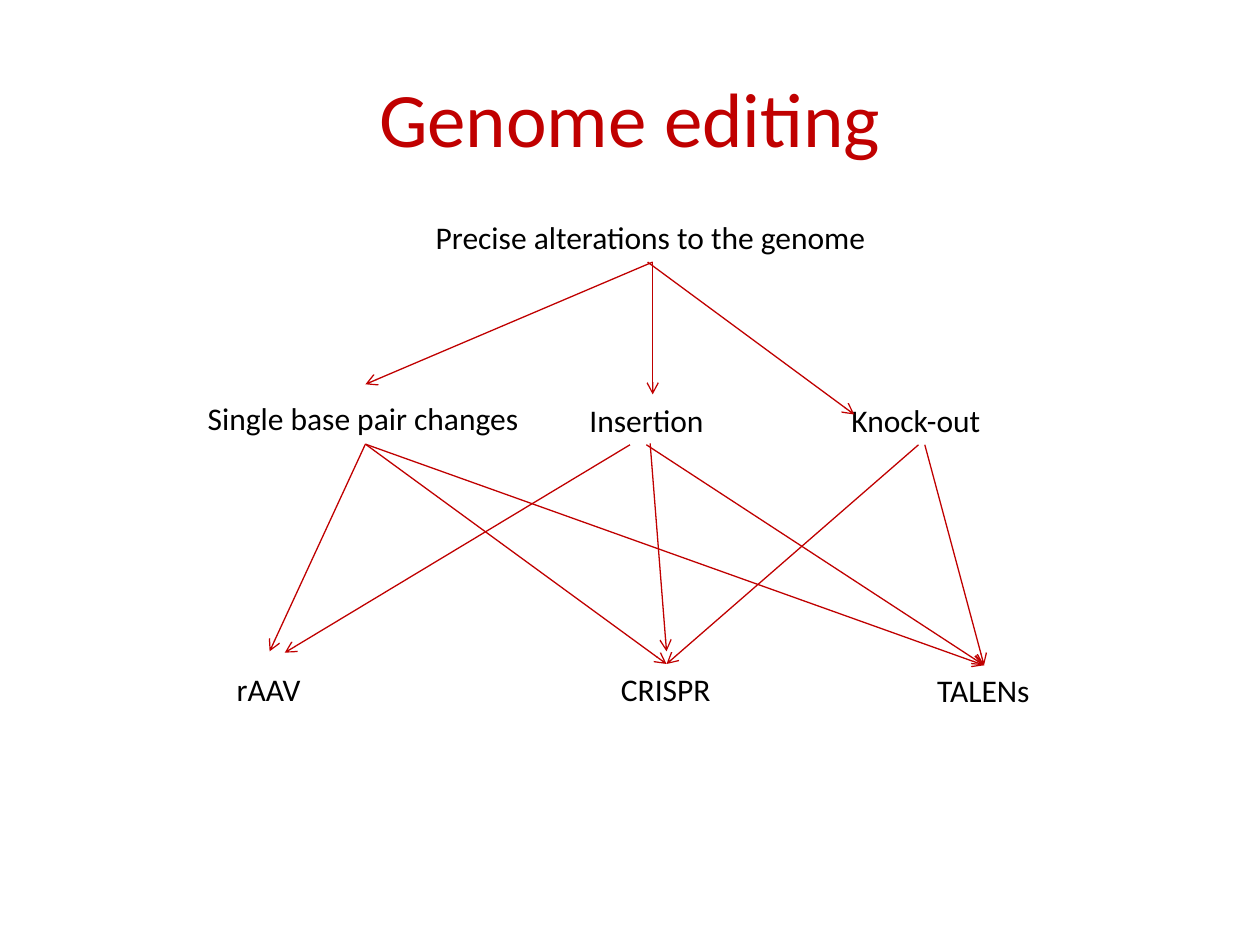
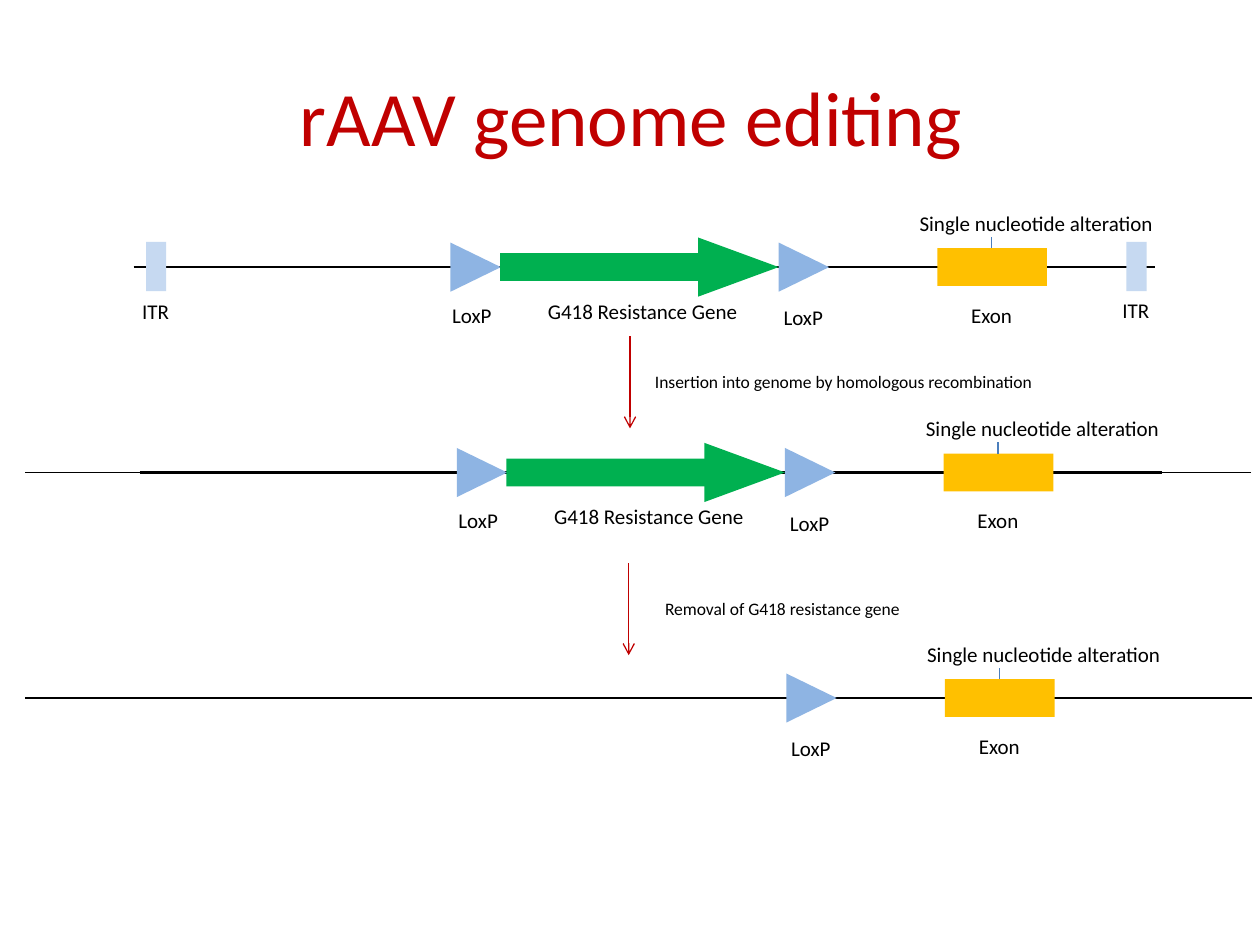
from lxml import etree
from pptx import Presentation, util as u
from pptx.dml.color import RGBColor
from pptx.enum import shapes, text
from pptx.oxml.ns import qn

COLS, ROWS = 100, 75
FONT = "Calibri"
RED, BLACK, BLUE = "C00000", "000000", "4B7EBC"
ITR_BLUE, LOXP_BLUE = "C6D9F1", "8EB4E3"
GREEN, AMBER = "00B050", "FFC000"


def color(hex_code):
    return RGBColor.from_string(hex_code)


class Deck:
    """Style and current slide; lengths are columns and rows of the grid."""

    def __init__(self):
        self.prs = Presentation()
        self.prs.slide_width, self.prs.slide_height = u.Inches(10), u.Inches(7.5)
        self.cell_w = self.prs.slide_width / COLS
        self.cell_h = self.prs.slide_height / ROWS

    def x(self, cols):
        return u.Emu(round(cols * self.cell_w))

    def y(self, rows):
        return u.Emu(round(rows * self.cell_h))

    def box(self, left, top, width, height):
        return self.x(left), self.y(top), self.x(width), self.y(height)

    def set_text(self, tf, words, size, hex_code):
        tf.text = words
        font = tf.paragraphs[0].runs[0].font
        font.name, font.size = FONT, u.Pt(size)
        font.color.rgb = color(hex_code)

    def slide(self, title, left, top):
        self.s = self.prs.slides.add_slide(self.prs.slide_layouts[5])
        self.shapes = self.s.shapes
        sp = self.shapes.title
        sp.left, sp.top, sp.width, sp.height = self.box(left, top, 90, 12.5)
        tf = sp.text_frame
        tf.vertical_anchor = text.MSO_ANCHOR.MIDDLE
        self.set_text(tf, title, 44, RED)
        tf.paragraphs[0].alignment = text.PP_ALIGN.CENTER

    def group(self):
        """Collect the elements that follow in a new group."""
        self.shapes = self.s.shapes.add_group_shape().shapes

    def label(self, words, left, top, width, size=12):
        height = {18: 4, 12: 3, 10: 2.7}[size]
        tf = self.shapes.add_textbox(*self.box(left, top, width, height)).text_frame
        tf.word_wrap = False
        tf.auto_size = text.MSO_AUTO_SIZE.SHAPE_TO_FIT_TEXT
        self.set_text(tf, words, size, BLACK)

    def shape(self, kind, cx, cy, width, height, hex_code):
        """Add a borderless shape around a centre point."""
        sp = self.shapes.add_shape(
            kind, *self.box(cx - width / 2, cy - height / 2, width, height))
        sp.shadow.inherit = False
        sp.fill.solid()
        sp.fill.fore_color.rgb = color(hex_code)
        sp.line.fill.background()
        return sp

    def bar(self, *args):
        self.shape(shapes.MSO_SHAPE.RECTANGLE, *args)

    def pointer(self, *args):
        """Add a triangle that points right; its size is given unrotated."""
        self.shape(shapes.MSO_SHAPE.ISOSCELES_TRIANGLE, *args).rotation = 90

    def line(self, start, end, hex_code=BLACK, weight=0.75):
        c = self.shapes.add_connector(
            shapes.MSO_CONNECTOR.STRAIGHT, self.x(start[0]), self.y(start[1]),
            self.x(end[0]), self.y(end[1]))
        c.line.color.rgb = color(hex_code)
        c.line.width = u.Pt(weight)
        etree.SubElement(c._element.spPr, qn("a:effectLst"))
        return c

    def arrow(self, start, end):
        c = self.line(start, end, RED)
        ln = c._element.spPr.find(qn("a:ln"))
        etree.SubElement(ln, qn("a:tailEnd"), type="arrow")


def genome_editing(d):
    d.slide("Genome editing", 5, 3)
    for words, left, top, width in [
        ("Precise alterations to the genome", 33.6, 16.8, 36.5),
        ("Single base pair changes", 15.5, 31.2, 27),
        ("Insertion", 45.8, 31.3, 11.2),
        ("Knock-out", 66.6, 31.3, 12.4),
        ("rAAV", 17.8, 52.7, 7.1),
        ("CRISPR", 48.3, 52.7, 9.2),
        ("TALENs", 73.4, 52.8, 9.4),
    ]:
        d.label(words, left, top, width, 18)

    root, base_change = (51.8, 20.8), (29, 35.25)
    crispr, talens = (52.9, 52.7), (78.1, 52.8)
    for start, end in [
        (root, (29, 30.5)), (root, (51.8, 31.3)), ((51.4, 20.8), (67.8, 32.9)),
        (base_change, (21.4, 51.7)), (base_change, crispr), (base_change, talens),
        ((50, 35.3), (22.6, 51.8)), ((51.6, 35.2), (52.9, 51.7)),
        ((51.3, 35.3), talens),
        ((72.9, 35.3), crispr), ((73.4, 35.3), talens),
    ]:
        d.arrow(start, end)


def construct(d, dx, axis, cassette=True, itr=False, genomic=False):
    """Draw one DNA strand, with its parts placed around the axis row."""
    d.group()
    d.line((10.6 + dx, axis), (91.7 + dx, axis), weight=1.5)
    if genomic:
        d.line((10.6 + dx, axis), (2, axis))
        d.line((98.8 + dx, axis), (90.2 + dx, axis))
    if itr:
        for cx, left, drop in [(12.4, 10.3, 2), (90.2, 88.1, 1.9)]:
            d.bar(cx + dx, axis - 0.05, 1.6, 3.9, ITR_BLUE)
            d.label("ITR", left + dx, axis + drop, 4.2)

    loxp_sites = [(37.75, 34.9, 2.3), (63.8, 61.2, 2.5)]
    for cx, left, drop in loxp_sites if cassette else loxp_sites[1:]:
        d.pointer(cx + dx, axis, 3.9, 4, LOXP_BLUE)
        d.label("LoxP", left + dx, axis + drop, 5.2)
    if cassette:
        d.pointer(58.6 + dx, axis, 4.7, 6.4, GREEN)
        d.bar(48 + dx, axis, 16.6, 2.2, GREEN)
        d.label("G418 Resistance Gene", 42.5 + dx, axis + 2, 17.3)

    d.bar(78.75 + dx, axis, 8.7, 3, AMBER)
    d.line((78.7 + dx, axis - 1.5), (78.7 + dx, axis - 2.4), BLUE)
    d.label("Exon", 76.1 + dx, axis + 2.3, 5.3)
    d.label("Single nucleotide alteration", 72 + dx, axis - 5, 20.7)


def step(d, words, x, top, left, width):
    """Draw a downward arrow with its caption beside it."""
    d.arrow((x, top), (x, top + 7.3))
    d.label(words, left, top + 2.25, width, 10)


def raav_editing(d):
    d.slide("rAAV genome editing", 5.1, 2.9)
    construct(d, 0, 21.2, itr=True)
    construct(d, 0.5, 37.5, genomic=True)
    step(d, "Insertion into genome by homologous recombination", 50, 26.7, 51, 32.4)
    construct(d, 0.6, 55.4, cassette=False, genomic=True)
    step(d, "Removal of G418 resistance gene", 49.9, 44.7, 51.8, 21)


def main():
    d = Deck()
    genome_editing(d)
    raav_editing(d)
    d.prs.save("out.pptx")


if __name__ == "__main__":
    main()
